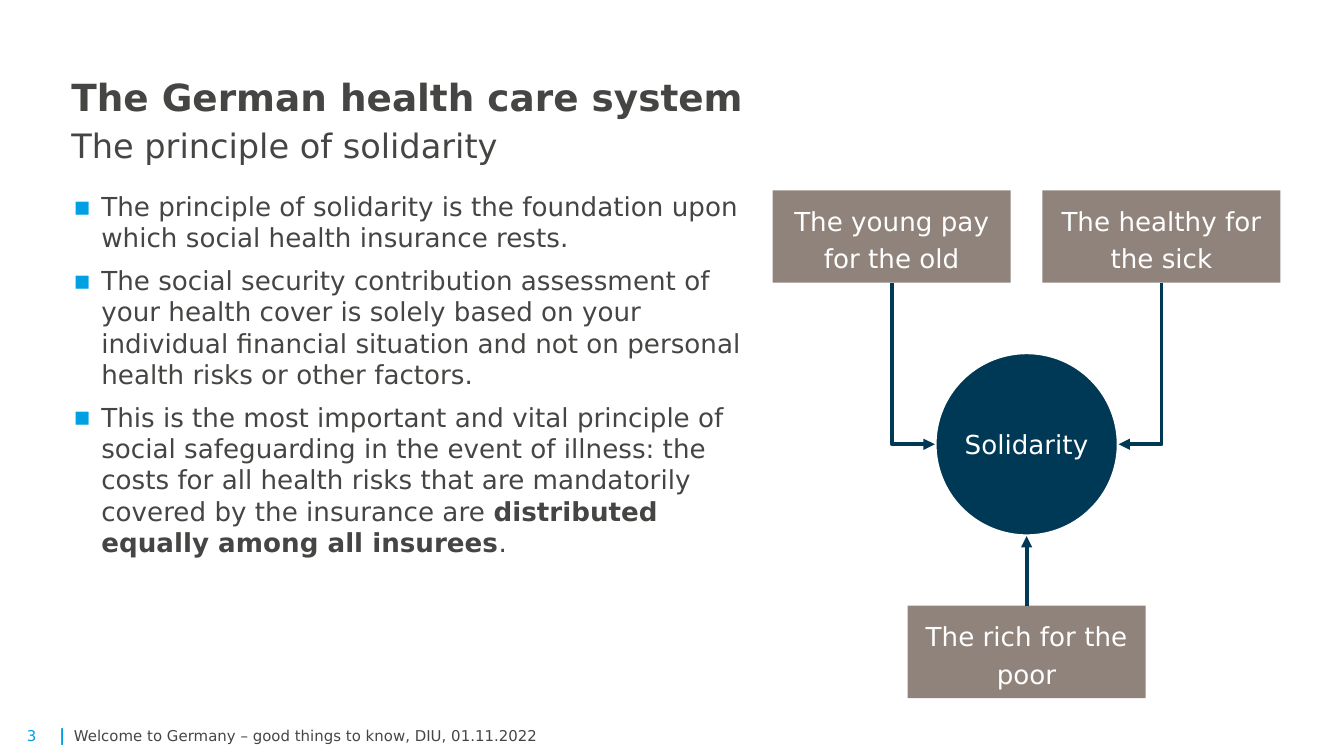
import pptx
import pptx.util
from pptx.dml.color import RGBColor
from pptx.enum.shapes import MSO_CONNECTOR, MSO_SHAPE
from pptx.enum.text import MSO_ANCHOR, MSO_AUTO_SIZE, PP_ALIGN
from pptx.oxml.ns import qn
from lxml import etree

Pt = pptx.util.Pt

FONT = "DejaVu Sans"
GREY = RGBColor(0x45, 0x45, 0x43)
CYAN = RGBColor(0x00, 0xA0, 0xE3)
TAUPE = RGBColor(0x8F, 0x83, 0x7B)
NAVY = RGBColor(0x00, 0x39, 0x55)
WHITE = RGBColor(0xFF, 0xFF, 0xFF)

HEADING = "The German health care system"
SUBHEADING = "The principle of solidarity"
# Each point is a list of (text, bold) runs
POINTS = [
    [("The principle of solidarity is the foundation upon which social health "
      "insurance rests.", False)],
    [("The social security contribution assessment of your health cover is solely "
      "based on your individual financial situation and not on personal health "
      "risks or other factors.", False)],
    [("This is the most important and vital principle of social safeguarding in the "
      "event of illness: the costs for all health risks that are mandatorily covered "
      "by the insurance are ", False),
     ("distributed equally among all insurees", True), (".", False)],
]
YOUNG, HEALTHY, RICH = ("The young pay for the old", "The healthy for the sick",
                        "The rich for the poor")
HUB = "Solidarity"
# text, left, width, size, colour, bold
FOOTER = [
    ("3", 14.4, 17, 8, CYAN, False),
    ("|", 31.7, 4.5, 9, CYAN, True),
    ("Welcome to Germany – good things to know, DIU, 01.11.2022",
     39.6, 646.5, 8, GREY, False),
]

BOX_W, BOX_H, BOX_GAP = 127.5, 49.5, 17
BOX_LEFT, BOX_TOP, RICH_TOP = 414, 102, 324.5
CENTRE_X = BOX_LEFT + BOX_W + BOX_GAP / 2
HUB_Y, HUB_SIZE = 238, 98.5


def style(font, size, color, bold=False):
    font.name, font.size, font.bold = FONT, Pt(size), bold
    font.color.rgb = color


def place(shape, left, top, width, height):
    shape.left, shape.top = Pt(left), Pt(top)
    shape.width, shape.height = Pt(width), Pt(height)


def set_frame(frame, anchor, inset=0, wrap=True):
    frame.auto_size = MSO_AUTO_SIZE.NONE
    frame.word_wrap = wrap
    frame.vertical_anchor = anchor
    frame.margin_left = frame.margin_right = Pt(inset)
    frame.margin_top = frame.margin_bottom = Pt(inset)


def add_bullet(paragraph):
    properties = paragraph._p.get_or_add_pPr()
    properties.set("marL", str(Pt(15)))
    properties.set("indent", str(Pt(-15)))
    color = etree.SubElement(properties, qn("a:buClr"))
    etree.SubElement(color, qn("a:srgbClr")).set("val", str(CYAN))
    etree.SubElement(properties, qn("a:buFont")).set("typeface", FONT)
    etree.SubElement(properties, qn("a:buChar")).set("char", "▪")


def add_node(kind, text, left, top, width, height, fill):
    node = slide.shapes.add_shape(kind, Pt(left), Pt(top), Pt(width), Pt(height))
    node.shadow.inherit = False
    node.fill.solid()
    node.fill.fore_color.rgb = fill
    node.line.fill.background()
    set_frame(node.text_frame, MSO_ANCHOR.MIDDLE, 3)
    paragraph = node.text_frame.paragraphs[0]
    paragraph.text = text
    paragraph.alignment = PP_ALIGN.CENTER
    style(paragraph.font, 14, WHITE)
    return node


def add_box(text, left, top):
    box = add_node(MSO_SHAPE.RECTANGLE, text, left, top, BOX_W, BOX_H, TAUPE)
    box.text_frame.paragraphs[0].line_spacing = 1.2
    return box


def add_arrow(kind, x1, y1, x2, y2):
    arrow = slide.shapes.add_connector(kind, Pt(x1), Pt(y1), Pt(x2), Pt(y2))
    arrow.line.color.rgb = NAVY
    arrow.line.width = Pt(2)
    etree.SubElement(arrow.line._get_or_add_ln(), qn("a:tailEnd")).set("type", "triangle")
    etree.SubElement(arrow._element.spPr, qn("a:effectLst"))
    return arrow


def add_elbow(x1, y1, x2, y2):
    """Arrow that runs straight down, then sideways, as a rotated one-bend connector."""
    mid_x, mid_y = (x1 + x2) / 2, (y1 + y2) / 2
    half_w, half_h = (y2 - y1) / 2, abs(x2 - x1) / 2
    rotation = 90
    if x2 > x1:  # bending right needs the mirrored form
        half_w, rotation = -half_w, 270
    elbow = add_arrow(MSO_CONNECTOR.ELBOW, mid_x - half_w, mid_y - half_h,
                      mid_x + half_w, mid_y + half_h)
    properties = elbow._element.spPr
    properties.find(qn("a:xfrm")).set("rot", str(rotation * 60000))
    properties.find(qn("a:prstGeom")).set("prst", "bentConnector2")


presentation = pptx.Presentation()
presentation.slide_width, presentation.slide_height = Pt(720), Pt(405)
slide = presentation.slides.add_slide(presentation.slide_layouts[1])

title = slide.shapes.title
place(title, 38.2, 3, 578, 85.5)
set_frame(title.text_frame, MSO_ANCHOR.BOTTOM)
headline = title.text_frame.paragraphs[0]
headline.alignment = PP_ALIGN.LEFT
headline.line_spacing = Pt(25)
heading = headline.add_run()
heading.text = HEADING
style(heading.font, 20, GREY, True)
headline.add_line_break()
subheading = headline.add_run()
subheading.text = SUBHEADING
style(subheading.font, 18, GREY)

body = slide.placeholders[1]
place(body, 39.3, 102, 374.5, 272)
set_frame(body.text_frame, MSO_ANCHOR.TOP)
for index, runs in enumerate(POINTS):
    point = body.text_frame.paragraphs[0] if index == 0 else body.text_frame.add_paragraph()
    add_bullet(point)
    point.space_before, point.space_after = Pt(0), Pt(6)
    style(point.font, 14, GREY)
    for text, bold in runs:
        run = point.add_run()
        run.text = text
        style(run.font, 14, GREY, bold)

for text, left, width, size, color, bold in FOOTER:
    note = slide.shapes.add_textbox(Pt(left), Pt(388), Pt(width), Pt(11))
    set_frame(note.text_frame, MSO_ANCHOR.BOTTOM, wrap=width > 100)
    note.text_frame.text = text
    style(note.text_frame.paragraphs[0].font, size, color, bold)

hub = add_node(MSO_SHAPE.OVAL, HUB, CENTRE_X - HUB_SIZE / 2, HUB_Y - HUB_SIZE / 2,
               HUB_SIZE, HUB_SIZE, NAVY)
hub.line.color.rgb = WHITE
hub.line.width = Pt(2)
hub.text_frame.word_wrap = False

for text, side in ((YOUNG, -1), (HEALTHY, 1)):
    box_x = CENTRE_X + side * (BOX_W + BOX_GAP) / 2
    add_box(text, box_x - BOX_W / 2, BOX_TOP)
    add_elbow(box_x, BOX_TOP + BOX_H, CENTRE_X + side * HUB_SIZE / 2, HUB_Y)

rich = add_box(RICH, CENTRE_X - BOX_W / 2, RICH_TOP)
rich_arrow = add_arrow(MSO_CONNECTOR.STRAIGHT, CENTRE_X, RICH_TOP,
                       CENTRE_X, HUB_Y + HUB_SIZE / 2)
rich_arrow.begin_connect(rich, 0)

presentation.save("out.pptx")
